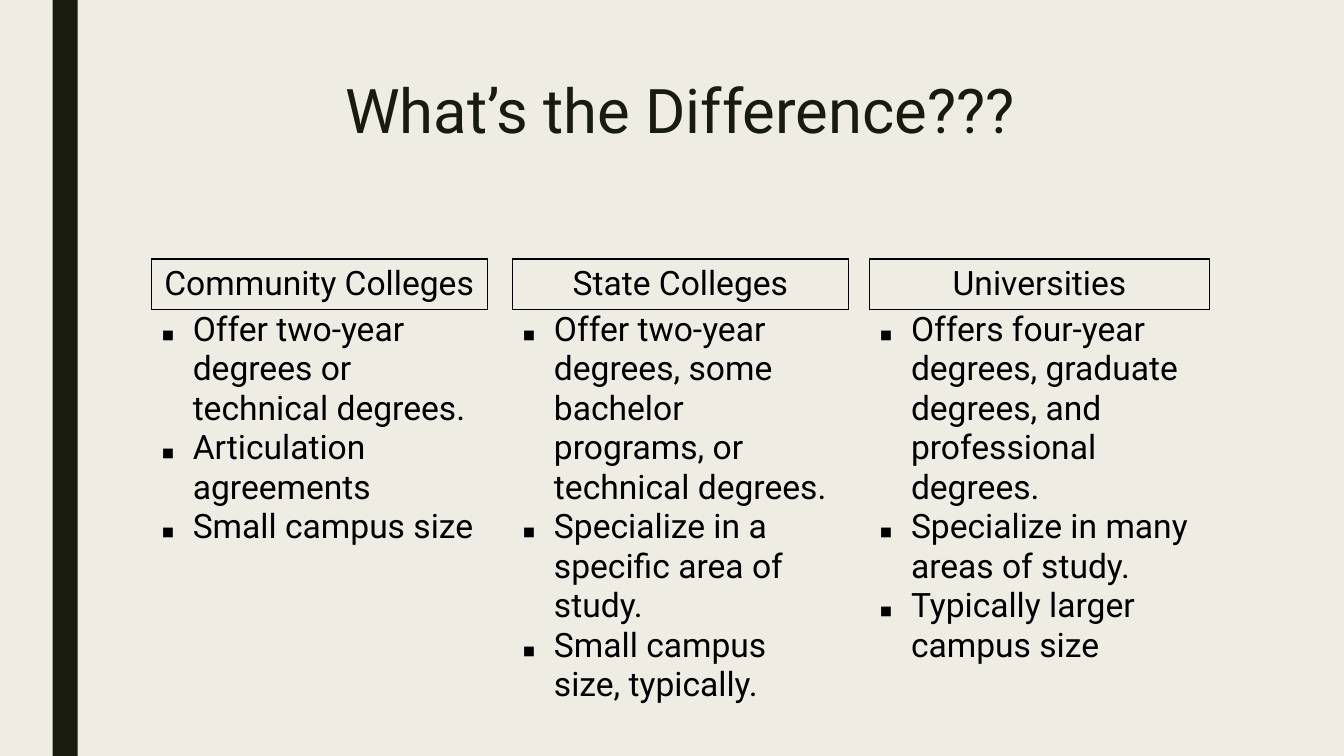
"""Build a slide that compares three kinds of college in three columns."""
from lxml.etree import SubElement
from pptx import Presentation
from pptx.dml.color import RGBColor
from pptx.enum.shapes import MSO_SHAPE as Shape
from pptx.enum.text import MSO_ANCHOR as Anchor, PP_ALIGN as Align
from pptx.oxml.ns import qn
from pptx.util import Pt

DARK, BLACK, CREAM = "191B0E", "000000", "EFEDE3"
TOP_HEADING, TOP_LIST = 185, 218
COLUMNS = [
    (108, 240, "Community Colleges", [
        "Offer two-year degrees or technical degrees.",
        "Articulation agreements",
        "Small campus size",
    ]),
    (366, 240, "State Colleges", [
        "Offer two-year degrees, some bachelor programs, or technical degrees.",
        "Specialize in a specific area of study.",
        "Small campus size, typically.",
    ]),
    (621, 243, "Universities", [
        "Offers four-year degrees, graduate degrees, and professional degrees.",
        "Specialize in many areas of study.",
        "Typically larger campus size",
    ]),
]


def paint(fill, color):
    fill.solid()
    fill.fore_color.rgb = RGBColor.from_string(color)


def write(para, text, size=24, color=BLACK, align=Align.LEFT, bullet=None):
    para.alignment = align
    span = para.add_run()
    span.text = text
    span.font.name = "Roboto"
    span.font.size = Pt(size)
    paint(span.font.fill, color)
    if bullet:
        props = para._p.get_or_add_pPr()
        props.set("marL", str(Pt(22.5)))
        props.set("indent", str(Pt(-22.5)))
        SubElement(props, qn("a:buFont"), typeface="Noto Sans Symbols")
        SubElement(props, qn("a:buChar"), char=bullet)


deck = Presentation()
deck.slide_width, deck.slide_height = Pt(960), Pt(540)
page = deck.slides.add_slide(deck.slide_layouts[5])
paint(page.background.fill, CREAM)

stripe = page.shapes.add_shape(Shape.RECTANGLE, Pt(37.5), Pt(0), Pt(18), Pt(540))
stripe.shadow.inherit = False
paint(stripe.fill, DARK)
stripe.line.fill.background()

title = page.shapes.title
title.left, title.top, title.width, title.height = Pt(108), Pt(54), Pt(756), Pt(117)
title.text_frame.vertical_anchor = Anchor.TOP
title_para = title.text_frame.paragraphs[0]
title_para.line_spacing = 0.89
write(title_para, "What’s the Difference???", size=44, color=DARK, align=Align.CENTER)

for left, width, heading, points in COLUMNS:
    for top, height, lines, align, bullet in [
        (TOP_LIST, 277, points, Align.LEFT, "▪"),
        (TOP_HEADING, 36, [heading], Align.CENTER, None),
    ]:
        frame = page.shapes.add_table(1, 1, Pt(left), Pt(top), Pt(width), Pt(height))
        table = frame.table
        table.first_row = table.horz_banding = False
        cell = table.cell(0, 0)
        cell_props = cell._tc.get_or_add_tcPr()
        for side in ("lnL", "lnR", "lnT", "lnB"):
            border = SubElement(cell_props, qn(f"a:{side}"), w=str(Pt(1)))
            if bullet:
                SubElement(border, qn("a:noFill"))
            else:
                solid = SubElement(border, qn("a:solidFill"))
                SubElement(solid, qn("a:srgbClr"), val=BLACK)
        cell.fill.background()
        body = cell.text_frame
        for number, line in enumerate(lines):
            para = body.add_paragraph() if number else body.paragraphs[0]
            write(para, line, align=align, bullet=bullet)

deck.save("out.pptx")
